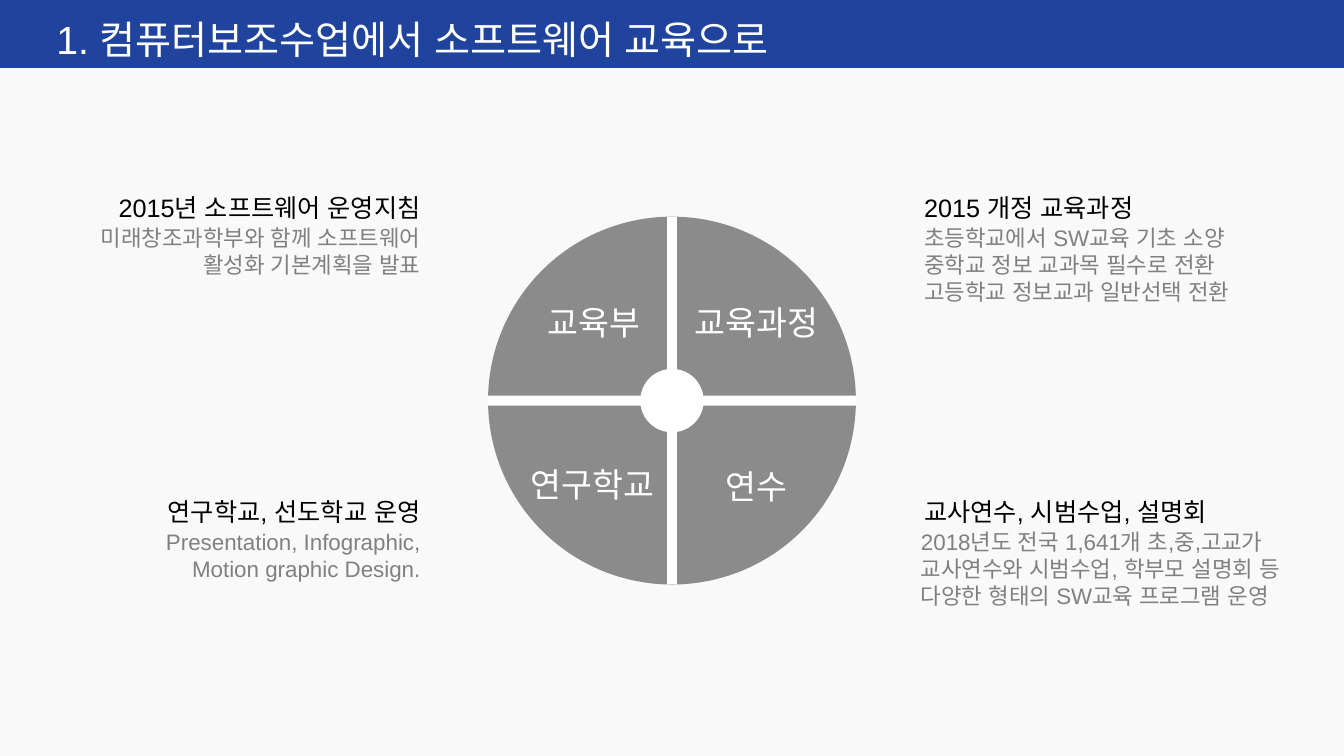
from lxml.etree import SubElement
from pptx import Presentation
from pptx.dml.color import RGBColor
from pptx.enum.shapes import MSO_SHAPE as Shape
from pptx.enum.text import MSO_AUTO_SIZE as AutoSize, PP_ALIGN as Align
from pptx.oxml.ns import qn
from pptx.util import Cm, Pt

COLORS = {
    "page": "F9F9F9", "banner": "20439D", "wheel": "808080",
    "white": "FFFFFF", "heading": "000000", "body": "808080",
}
FONT = "Arial"
WIDTH, HEIGHT = 33.87, 19.05


def color(name):
    return RGBColor.from_string(COLORS[name])


def add_block(page, kind, left, top, width, height, fill, alpha=None):
    block = page.shapes.add_shape(kind, Cm(left), Cm(top), Cm(width), Cm(height))
    block.shadow.inherit = False
    block.fill.solid()
    block.fill.fore_color.rgb = color(fill)
    block.line.fill.background()
    if alpha:
        tint = block.fill._xPr.find(".//" + qn("a:srgbClr"))
        SubElement(tint, qn("a:alpha"), val=str(alpha * 1000))


def add_text(page, left, top, width, height, lines, size, ink, align=Align.LEFT):
    box = page.shapes.add_textbox(Cm(left), Cm(top), Cm(width), Cm(height))
    frame = box.text_frame
    frame.word_wrap = False
    frame.auto_size = AutoSize.SHAPE_TO_FIT_TEXT
    for index, line in enumerate(lines):
        para = frame.add_paragraph() if index else frame.paragraphs[0]
        para.alignment = align
        span = para.add_run()
        span.text = line
        span.font.size = Pt(size)
        span.font.name = FONT
        span.font.color.rgb = color(ink)
        SubElement(span.font._element, qn("a:ea"), typeface=FONT)


def add_topic(page, edge, top, align, heading, heading_width, lines, body_width, shift=0):
    """Heading over body text, both set against one vertical edge."""
    from_right = align == Align.RIGHT
    left = edge - heading_width if from_right else edge
    add_text(page, left, top, heading_width, 1.02, [heading], 18, "heading", align)
    left = (edge - body_width if from_right else edge) + shift
    body_height = 0.27 + 0.68 * len(lines)
    add_text(page, left, top + 0.81, body_width, body_height, lines, 16, "body", align)


def add_wheel(page, left, top, size):
    center_x, center_y = left + size / 2, top + size / 2
    gap, hub = 0.25, 1.6
    add_block(page, Shape.OVAL, left, top, size, size, "wheel", alpha=90)
    # Cross that parts the quarters
    add_block(page, Shape.RECTANGLE, center_x - gap / 2, top, gap, size, "white")
    add_block(page, Shape.RECTANGLE, left, center_y - gap / 2, size, gap, "white")
    # Quarter labels: offset of each middle from the centre, then width
    labels = [
        ("연수", 2.12, 2.15, 2.24),
        ("교육과정", 2.13, -1.97, 3.94),
        ("연구학교", -2.01, 2.1, 3.94),
        ("교육부", -1.96, -1.97, 3.07),
    ]
    for label, right, down, width in labels:
        add_text(page, center_x + right - width / 2, center_y + down - 0.64,
                 width, 1.27, [label], 24, "white", Align.CENTER)
    # Hub
    add_block(page, Shape.OVAL, center_x - hub / 2, center_y - hub / 2, hub, hub, "white")


def add_banner(page, left, top, width, height, title):
    add_block(page, Shape.RECTANGLE, left, top, width, height, "banner")
    add_text(page, left + 1.17, top + 0.25, 20.12, 1.45, [title], 28, "white")


def main():
    deck = Presentation()
    deck.slide_width, deck.slide_height = Cm(WIDTH), Cm(HEIGHT)
    page = deck.slides.add_slide(deck.slide_layouts[6])
    page.background.fill.solid()
    page.background.fill.fore_color.rgb = color("page")

    # Topics around the wheel
    left_edge, right_edge = 10.85, 23.04
    upper, lower = 4.72, 12.37
    add_topic(page, right_edge, upper, Align.LEFT, "2015 개정 교육과정", 6.15,
              ["초등학교에서 SW교육 기초 소양", "중학교 정보 교과목 필수로 전환",
               "고등학교 정보교과 일반선택 전환"], 8.97)
    add_topic(page, right_edge, lower, Align.LEFT, "교사연수, 시범수업, 설명회", 8.28,
              ["2018년도 전국 1,641개 초,중,고교가", "교사연수와 시범수업, 학부모 설명회 등",
               "다양한 형태의 SW교육 프로그램 운영"], 10.44, shift=-0.08)
    add_topic(page, left_edge, upper, Align.RIGHT, "2015년 소프트웨어 운영지침", 8.71,
              ["미래창조과학부와 함께 소프트웨어", "활성화 기본계획을 발표"], 9.37)
    add_topic(page, left_edge, lower, Align.RIGHT, "연구학교, 선도학교 운영", 7.47,
              ["Presentation, Infographic,", "Motion graphic Design."], 7.01)

    add_wheel(page, 12.3, 5.46, 9.27)
    add_banner(page, 0, 0, WIDTH, 1.71, "1. 컴퓨터보조수업에서 소프트웨어 교육으로")
    deck.save("out.pptx")


if __name__ == "__main__":
    main()
